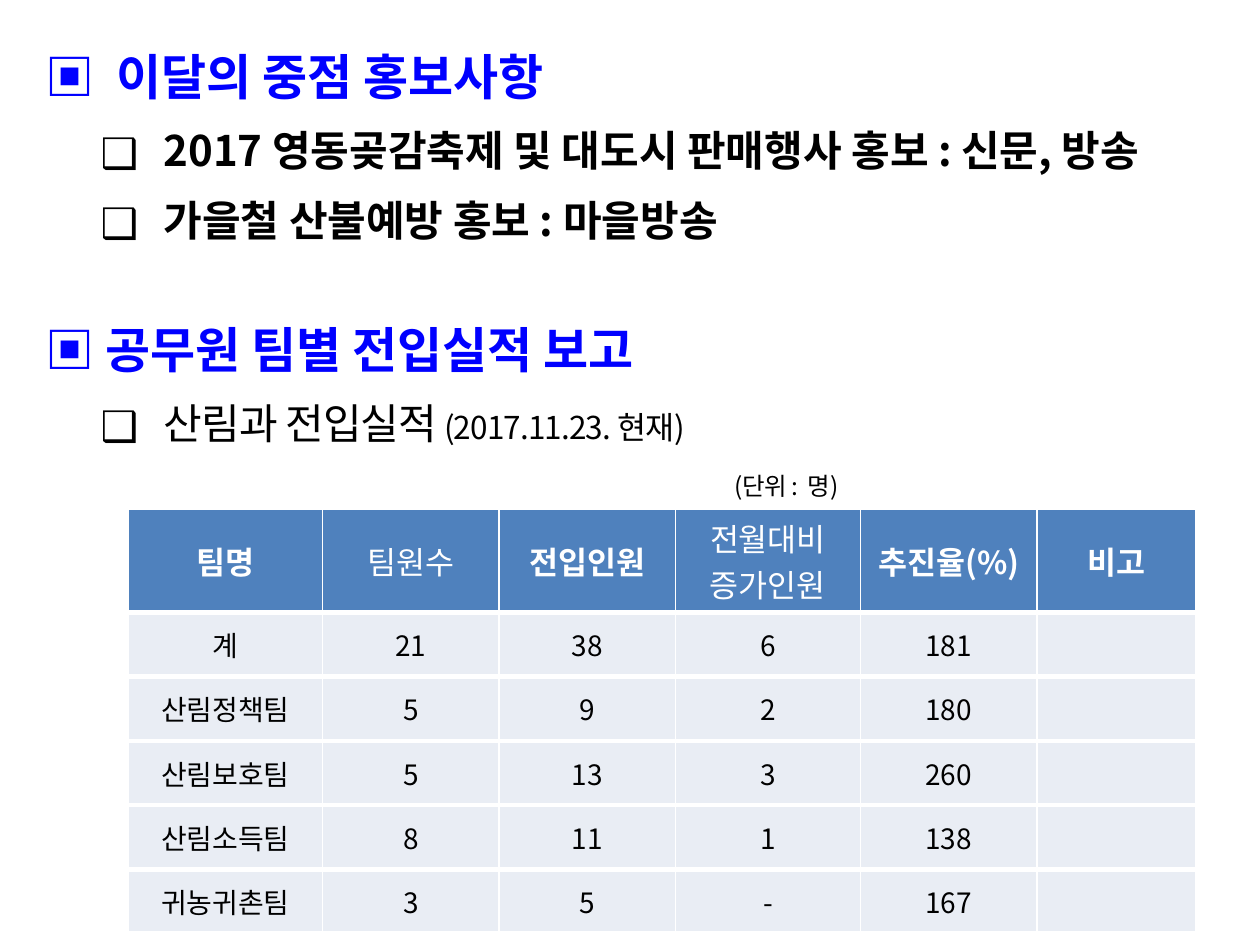
from lxml import etree
from pptx import Presentation
from pptx.dml.color import RGBColor
from pptx.enum import text
from pptx.oxml import ns
from pptx.util import Inches, Pt

FONT = "Noto Sans CJK KR"
HUES = {"blue": "0000FF", "black": "000000", "white": "FFFFFF",
        "head": "4F81BD", "body": "E9EDF4"}


def style(para, size, hue, bold=False):
    """Set one font on a paragraph, for Latin and Korean letters alike."""
    font = para.font
    font.name, font.size, font.bold = FONT, Pt(size), bold
    font.color.rgb = RGBColor.from_string(HUES[hue])
    props = para._p.pPr.find(ns.qn("a:defRPr"))
    etree.SubElement(props, ns.qn("a:ea"), typeface=FONT)
    return props


def edge(cell, sides):
    """Draw white cell borders; sides maps L, R, T, B to a width in points."""
    props = cell._tc.get_or_add_tcPr()
    for spot, (side, width) in enumerate(sides.items()):
        line = etree.Element(ns.qn(f"a:ln{side}"), w=str(Pt(width)))
        fill = etree.SubElement(line, ns.qn("a:solidFill"))
        etree.SubElement(fill, ns.qn("a:srgbClr"), val=HUES["white"])
        props.insert(spot, line)


deck = Presentation()
deck.slide_width, deck.slide_height = Inches(10), Inches(7.5)
slide = deck.slides.add_slide(deck.slide_layouts[6])

# Outline: kind, runs as (wording, own size), space before in points
outline = [
    ("head", [("▣  이달의 중점 홍보사항", None)], 0),
    ("strong", [("2017 영동곶감축제 및 대도시 판매행사 홍보 : 신문, 방송", None)], 0),
    ("strong", [("가을철 산불예방 홍보 : 마을방송", None)], 0),
    ("head", [("▣ 공무원 팀별 전입실적 보고", None)], 36),
    ("plain", [("산림과 전입실적", None), (" (2017.11.23. 현재)", 18)], 0),
    ("unit", [("(단위 :  명)", None)], 0),
]
# Kind: size, hue, bold, left margin, first-line indent, line pitch
kinds = {
    "head": (28, "blue", True, 0.56, -0.5, 40),
    "strong": (24, "black", True, 1, -0.5, 40),
    "plain": (24, "black", False, 1, -0.5, 40),
    "unit": (14, "black", False, 5.53, 0, 30),
}
box = slide.shapes.add_textbox(Inches(0.2), Inches(0.23), Inches(9.77), Inches(7.27))
frame = box.text_frame
frame.word_wrap = True
for row, (kind, runs, gap) in enumerate(outline):
    size, hue, bold, left, first, pitch = kinds[kind]
    para = frame.paragraphs[0] if row == 0 else frame.add_paragraph()
    para.line_spacing, para.space_before = Pt(pitch), Pt(gap)
    props = para._p.get_or_add_pPr()
    props.set("marL", str(Inches(left)))
    props.set("indent", str(Inches(first)))
    if kind in ("strong", "plain"):
        tint = etree.SubElement(props, ns.qn("a:buClr"))
        etree.SubElement(tint, ns.qn("a:srgbClr"), val=HUES["black"])
        etree.SubElement(props, ns.qn("a:buFont"), typeface=FONT)
        etree.SubElement(props, ns.qn("a:buChar"), char="❑")
    if kind == "head":
        tabs = etree.SubElement(props, ns.qn("a:tabLst"))
        etree.SubElement(tabs, ns.qn("a:tab"), pos=str(Inches(5.42)), algn="l")
    base = style(para, size, hue, bold)
    if not bold:
        base.set("spc", "-50")
    for words, own in runs:
        run = para.add_run()
        run.text = words
        if own:
            run.font.size = Pt(own)

# Team results
rows = [
    ("팀명", "팀원수", "전입인원", "전월대비 증가인원", "추진율(%)", "비고"),
    ("계", "21", "38", "6", "181", ""),
    ("산림정책팀", "5", "9", "2", "180", ""),
    ("산림보호팀", "5", "13", "3", "260", ""),
    ("산림소득팀", "8", "11", "1", "138", ""),
    ("귀농귀촌팀", "3", "5", "-", "167", ""),
]
light = ("팀원수", "전월대비 증가인원")
widths = [1.54, 1.4, 1.4, 1.47, 1.4, 1.26]
table = slide.shapes.add_table(len(rows), len(widths), Inches(1.02), Inches(4.04),
                               Inches(8.47), Inches(3.36)).table
for col, width in zip(table.columns, widths):
    col.width = Inches(width)
for r, words in enumerate(rows):
    top = r == 0
    table.rows[r].height = Inches(0.82 if top else 0.51)
    for c, word in enumerate(words):
        cell = table.cell(r, c)
        cell.fill.solid()
        cell.fill.fore_color.rgb = RGBColor.from_string(HUES["head" if top else "body"])
        cell.vertical_anchor = text.MSO_ANCHOR.MIDDLE
        edge(cell, {"L": 1, "R": 1, "T": 1 if top else 3, "B": 3})
        para = cell.text_frame.paragraphs[0]
        para.alignment = text.PP_ALIGN.CENTER
        if word:
            para.add_run().text = word
        style(para, 18 if top else 16, "white" if top else "black",
              top and word not in light)

deck.save("out.pptx")
